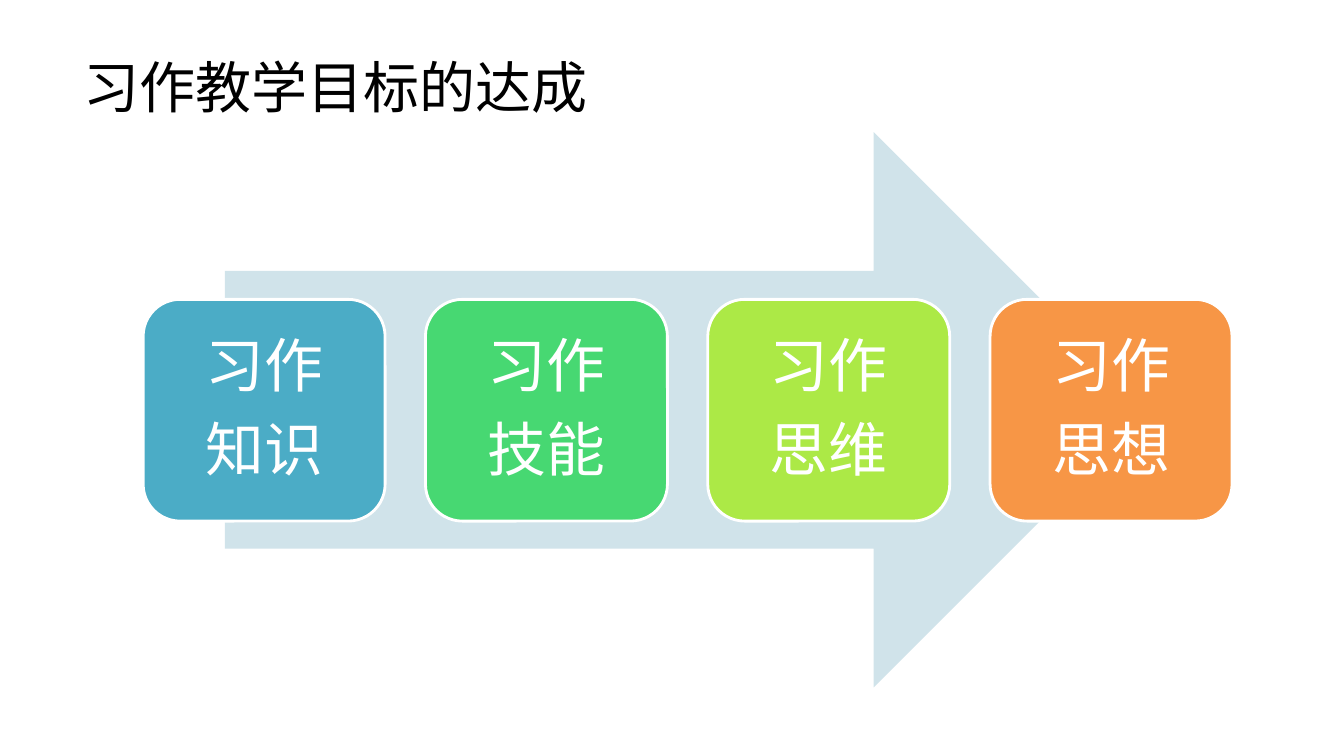
from dataclasses import dataclass

import pptx
import pptx.dml.color
import pptx.enum.shapes
import pptx.enum.text
import pptx.util
from pptx.util import Inches


@dataclass(frozen=True)
class Theme:
    title_font: str = "Noto Sans CJK SC"
    goal_font: str = "Calibri"
    title_size: int = 40
    goal_size: int = 42
    title_color: str = "000000"
    goal_color: str = "FFFFFF"
    outline: str = "FFFFFF"
    arrow: str = "D0E3EA"


@dataclass(frozen=True)
class Goal:
    lines: tuple[str, str]
    fill: str


THEME = Theme()
GOALS = [
    Goal(("习作", "知识"), "4BACC6"),
    Goal(("习作", "技能"), "47D872"),
    Goal(("习作", "思维"), "ACE946"),
    Goal(("习作", "思想"), "F79646"),
]
FIRST_LEFT, GOAL_TOP = 1.42, 2.97
GOAL_WIDTH, GOAL_HEIGHT = 2.4, 2.2
GOAL_STEP = 2.8
GOAL_INSET = 0.27


def rgb(color: str) -> pptx.dml.color.RGBColor:
    return pptx.dml.color.RGBColor.from_string(color)


def style_font(para, name: str, size: int, color: str) -> None:
    para.font.name = name
    para.font.size = pptx.util.Pt(size)
    para.font.color.rgb = rgb(color)


def add_title(slide, text: str) -> None:
    box = slide.shapes.add_textbox(Inches(0.73), Inches(0.47), Inches(12), Inches(1.09))
    box.text_frame.word_wrap = True
    para = box.text_frame.paragraphs[0]
    para.text = text
    style_font(para, THEME.title_font, THEME.title_size, THEME.title_color)


def add_arrow(slide) -> None:
    arrow = slide.shapes.add_shape(
        pptx.enum.shapes.MSO_SHAPE.RIGHT_ARROW,
        Inches(2.23), Inches(1.31), Inches(9.19), Inches(5.51),
    )
    arrow.shadow.inherit = False
    arrow.fill.solid()
    arrow.fill.fore_color.rgb = rgb(THEME.arrow)
    arrow.line.fill.background()


def add_goal(slide, goal: Goal, left: float) -> None:
    card = slide.shapes.add_shape(
        pptx.enum.shapes.MSO_SHAPE.ROUNDED_RECTANGLE,
        Inches(left), Inches(GOAL_TOP), Inches(GOAL_WIDTH), Inches(GOAL_HEIGHT),
    )
    card.shadow.inherit = False
    card.fill.solid()
    card.fill.fore_color.rgb = rgb(goal.fill)
    card.line.color.rgb = rgb(THEME.outline)
    card.line.width = pptx.util.Pt(2)

    frame = card.text_frame
    frame.word_wrap = True
    frame.vertical_anchor = pptx.enum.text.MSO_ANCHOR.MIDDLE
    frame.margin_left = frame.margin_right = Inches(GOAL_INSET)
    frame.margin_top = frame.margin_bottom = Inches(GOAL_INSET)
    for index, line in enumerate(goal.lines):
        para = frame.paragraphs[0] if index == 0 else frame.add_paragraph()
        para.text = line
        para.alignment = pptx.enum.text.PP_ALIGN.CENTER
        para.line_spacing = 0.9
        para.space_after = pptx.util.Pt(0.35 * THEME.goal_size)
        style_font(para, THEME.goal_font, THEME.goal_size, THEME.goal_color)


def main() -> None:
    deck = pptx.Presentation()
    deck.slide_width, deck.slide_height = Inches(13.33), Inches(7.5)
    slide = deck.slides.add_slide(deck.slide_layouts[6])
    add_title(slide, "习作教学目标的达成")
    add_arrow(slide)
    for index, goal in enumerate(GOALS):
        add_goal(slide, goal, FIRST_LEFT + index * GOAL_STEP)
    deck.save("out.pptx")


if __name__ == "__main__":
    main()
